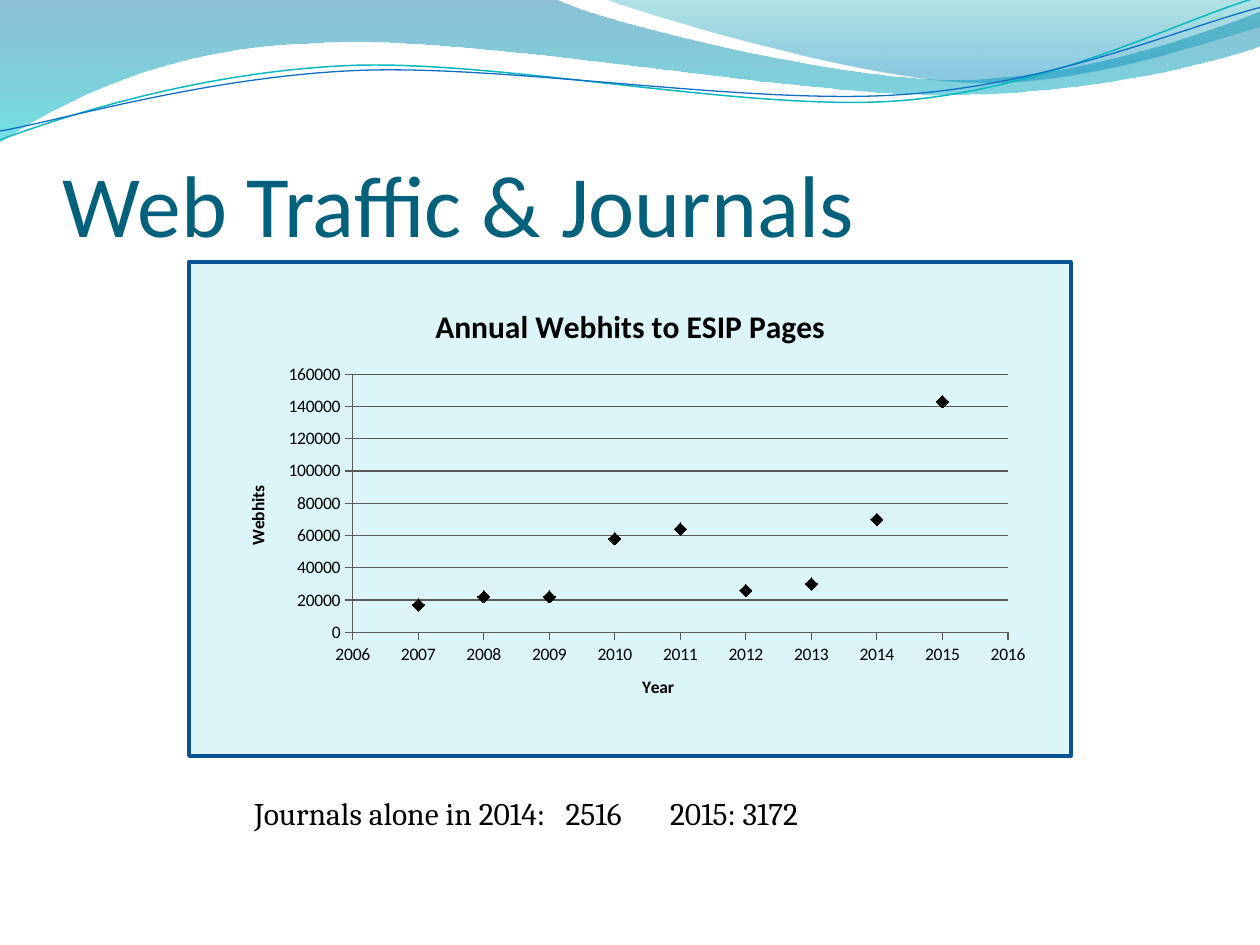
from math import cos, radians, sin

from lxml.etree import SubElement
from pptx import Presentation
from pptx.chart.data import XyChartData
from pptx.dml.color import RGBColor
from pptx.enum.chart import XL_CHART_TYPE as Kind
from pptx.enum.chart import XL_MARKER_STYLE as Mark
from pptx.enum.chart import XL_TICK_MARK as Tick
from pptx.enum.shapes import MSO_SHAPE as Shape
from pptx.enum.text import MSO_ANCHOR as Anchor
from pptx.oxml import parse_xml
from pptx.oxml.ns import nsdecls, qn
from pptx.util import Inches, Pt

BLACK = RGBColor(0x00, 0x00, 0x00)
GRAY = RGBColor(0x59, 0x59, 0x59)
TITLE = RGBColor(0x04, 0x61, 0x7B)
PANEL = RGBColor(0xDB, 0xF5, 0xF9)
EDGE = RGBColor(0x0B, 0x52, 0x92)
TEAL = RGBColor(0x0A, 0xB8, 0xBF)
BLUE = RGBColor(0x0F, 0x6F, 0xC6)
DEEP = RGBColor(0x00, 0x74, 0xA1)
AQUA = RGBColor(0x00, 0xC6, 0xCF)
SEA = RGBColor(0x00, 0xA1, 0xA9)
SKY = RGBColor(0x00, 0x8B, 0xBF)

TILT = 2.7
WIDE, HIGH = 6.52, 3.5
BAND = [(0, 0), (4.4, -0.01), (4.76, 0.17, 6.64, 0.63, 7.58, 0.63),
        (8.53, 0.63, 9.58, 0.26, 10, 0.09), (10.01, 0.36),
        (9.83, 0.44, 8.7, 0.76, 7.46, 0.75),
        (6.22, 0.75, 3.82, 0.28, 2.57, 0.34),
        (1.29, 0.36, 0.46, 0.83, -0.01, 1.13), (0, 0)]
CREST = [(4.79, -0.01), (5.09, 0.11, 6.82, 0.62, 7.69, 0.65),
         (8.56, 0.69, 9.61, 0.32, 10, 0.21), (10, 0), (4.79, -0.01)]
UPPER = [(0, 1.11), (0.48, 0.93, 1.58, 0.57, 2.77, 0.52),
         (3.95, 0.47, 5.93, 0.89, 7.13, 0.8),
         (8.33, 0.71, 9.38, 0.15, 9.98, -0.02)]
LOWER = [(0, 1.04), (0.47, 0.96, 1.64, 0.61, 2.83, 0.56),
         (4.03, 0.51, 5.97, 0.84, 7.17, 0.75),
         (8.36, 0.67, 9.41, 0.21, 10, 0.06)]
HITS = [17000, 22000, 22000, 58000, 64000, 26000, 30000, 70000, 143000]


def add_path(slide, path, closed):
    """Draw a freeform of straight lines and cubic curves."""
    first, *rest = [(Inches(part[i]), Inches(part[i + 1]))
                    for part in path for i in range(0, len(part), 2)]
    pen = slide.shapes.build_freeform(*first)
    pen.add_line_segments(rest, close=closed)
    shape = pen.convert_to_shape()
    shape.shadow.inherit = False
    lines = iter(list(shape._element.iter(qn("a:lnTo"))))
    for part in path[1:]:
        line = next(lines)
        if len(part) == 6:
            line.addprevious(parse_xml(f"<a:cubicBezTo {nsdecls('a')}/>"))
            curve = line.getprevious()
            for node in (line, next(lines), next(lines)):
                curve.append(node[0])
                node.getparent().remove(node)
    return shape


def add_wave(slide, path, stops):
    """Add a closed wave with a translucent vertical gradient."""
    shape = add_path(slide, path, True)
    shape.line.fill.background()
    shape.fill.gradient()
    shape.fill.gradient_angle = 270
    for stop, (place, color, _) in zip(shape.fill.gradient_stops, stops):
        stop.position = place
        stop.color.rgb = color
    tints = shape.fill._xPr.iter(qn("a:srgbClr"))
    for tint, (_, _, alpha) in zip(tints, stops):
        SubElement(tint, qn("a:alpha"), val=str(alpha * 1000))


def turn(part, mid):
    """Turn the points of a path part clockwise about a middle point."""
    s, c = sin(radians(TILT)), cos(radians(TILT))
    out = []
    for x, y in zip(part[::2], part[1::2]):
        dx, dy = x - mid[0], y - mid[1]
        out += [mid[0] + dx * c - dy * s, mid[1] + dx * s + dy * c]
    return out


def add_curve(slide, path, mid, color, width):
    """Add an open curved line, tilted about its middle."""
    shape = add_path(slide, [turn(part, mid) for part in path], False)
    shape.rotation = -TILT
    shape.fill.background()
    shape.line.color.rgb = color
    shape.line.width = Pt(width)


def add_panel(slide):
    """Add the framed panel behind the chart."""
    panel = slide.shapes.add_shape(Shape.RECTANGLE, Inches(1.5), Inches(2.08),
                                   Inches(7), Inches(3.92))
    panel.shadow.inherit = False
    panel.fill.solid()
    panel.fill.fore_color.rgb = PANEL
    panel.line.color.rgb = EDGE
    panel.line.width = Pt(2)


def set_font(font, name, size, color, bold=False):
    """Set the look of a font."""
    font.name = name
    font.size = Pt(size)
    font.bold = bold
    font.color.rgb = color


def add_text(slide, box, text, name, size, color):
    """Add a one-line text box and return its frame."""
    frame = slide.shapes.add_textbox(*map(Inches, box)).text_frame
    frame.word_wrap = True
    frame.text = text
    set_font(frame.paragraphs[0].runs[0].font, name, size, color)
    return frame


def add_tabs(para, stops):
    """Add left tab stops, in inches, to a paragraph."""
    tabs = SubElement(para._p.get_or_add_pPr(), qn("a:tabLst"))
    for stop in stops:
        SubElement(tabs, qn("a:tab"), pos=str(Inches(stop)), algn="l")


def set_place(node, index, inner=False, **spots):
    """Place a chart part, in inches from the chart's corner."""
    for old in node.findall(qn("c:layout")):
        node.remove(old)
    layout = parse_xml(f"<c:layout {nsdecls('c')}><c:manualLayout/></c:layout>")
    manual = layout[0]
    if inner:
        SubElement(manual, qn("c:layoutTarget"), val="inner")
    for key in ("x", "y"):
        SubElement(manual, qn(f"c:{key}Mode"), val="edge")
    for key, spot in spots.items():
        full = WIDE if key in "xw" else HIGH
        SubElement(manual, qn(f"c:{key}"), val=str(spot / full))
    node.insert(index, layout)


def set_title(title, text, size, x, y):
    """Write and place a chart or axis title."""
    title.text_frame.text = text
    set_font(title.text_frame.paragraphs[0].runs[0].font, "Calibri", size, BLACK, True)
    set_place(title._element, 1, x=x, y=y)


def set_axis(axis, low, high, step, grid):
    """Set the scale and look of an axis."""
    axis.minimum_scale, axis.maximum_scale, axis.major_unit = low, high, step
    axis.has_major_gridlines = grid
    axis.major_tick_mark = Tick.OUTSIDE
    axis.minor_tick_mark = Tick.NONE
    lines = [axis.format.line] + ([axis.major_gridlines.format.line] if grid else [])
    for line in lines:
        line.color.rgb = GRAY
        line.width = Pt(0.7)
    axis.tick_labels.number_format = "0"
    axis.tick_labels.number_format_is_linked = False
    set_font(axis.tick_labels.font, "Calibri", 10, BLACK)


def add_hits(slide):
    """Add the scatter chart of yearly hits."""
    data = XyChartData()
    series = data.add_series("Series 1")
    for year, hits in enumerate(HITS, 2007):
        series.add_data_point(year, hits)
    chart = slide.shapes.add_chart(Kind.XY_SCATTER, Inches(1.75), Inches(2.25),
                                   Inches(WIDE), Inches(HIGH), data).chart
    set_font(chart.font, "Calibri", 10, BLACK)
    chart.has_legend = False
    chart.has_title = True
    set_title(chart.chart_title, "Annual Webhits to ESIP Pages", 18, 1.66, 0.12)
    set_axis(chart.category_axis, 2006, 2016, 1, False)
    set_axis(chart.value_axis, 0, 160000, 20000, True)
    set_title(chart.category_axis.axis_title, "Year", 10, 3.32, 3.09)
    set_title(chart.value_axis.axis_title, "Webhits", 10, 0.18, 1.58)
    plot = chart.plots[0]
    plot.vary_by_categories = False
    dots = plot.series[0]
    dots.format.line.fill.background()
    dots.marker.style = Mark.DIAMOND
    dots.marker.size = 7
    for paint in (dots.marker.format.fill, dots.marker.format.line.fill):
        paint.solid()
        paint.fore_color.rgb = BLACK
    area = chart._chartSpace.find(".//" + qn("c:plotArea"))
    set_place(area, 0, True, x=1.05, y=0.72, w=5.2, h=2.05)


def main():
    """Build and save the slide."""
    deck = Presentation()
    deck.slide_width, deck.slide_height = Inches(10), Inches(7.5)
    slide = deck.slides.add_slide(deck.slide_layouts[6])
    add_wave(slide, BAND, [(0, DEEP, 45), (1, AQUA, 55)])
    add_wave(slide, CREST, [(0, SEA, 30), (0.8, SKY, 45)])
    add_curve(slide, UPPER, (4.99, 0.58), TEAL, 0.85)
    add_curve(slide, LOWER, (5, 0.59), BLUE, 0.75)
    add_panel(slide)
    head = add_text(slide, (0.5, 0.77, 9, 1.25), "Web Traffic & Journals",
                    "Calibri", 50, TITLE)
    head.vertical_anchor = Anchor.BOTTOM
    head.margin_left = head.margin_right = head.margin_bottom = 0
    add_hits(slide)
    note = add_text(slide, (1.92, 6.25, 7.75, 0.4),
                    "Journals alone in 2014:\t2516\t2015: 3172", "Cambria", 18, BLACK)
    add_tabs(note.paragraphs[0], (2.47, 3.3))
    deck.save("out.pptx")


if __name__ == "__main__":
    main()
